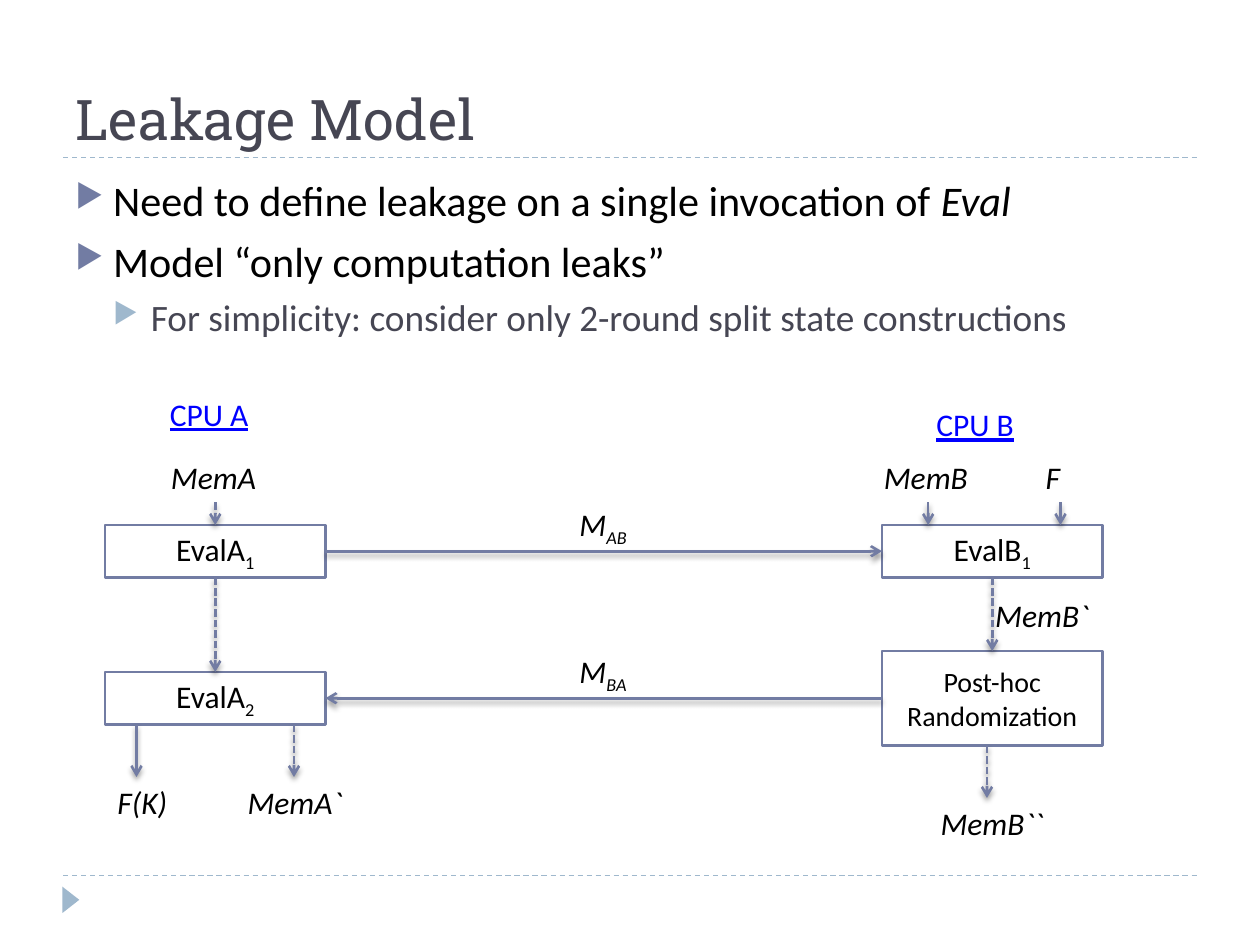
from lxml import etree
from pptx import Presentation
from pptx import util as u
from pptx.dml.color import RGBColor
from pptx.enum import dml, shapes, text
from pptx.oxml.ns import qn

COLS, ROWS = 120, 90
INK, SLATE, INDIGO, MIST, LINK = "000000", "464653", "727CA3", "9FB8CD", "0000FF"
BOX_W, BOX_H, LABEL_H = 21, 5, 4.85
TOP, LEFT, BOTTOM, RIGHT = range(4)

prs = Presentation()
prs.slide_width, prs.slide_height = u.Inches(10), u.Inches(7.5)
UNIT = prs.slide_width / COLS


def grid(*cells):
    return [u.Emu(round(cell * UNIT)) for cell in cells]


def color(hex_code):
    return RGBColor.from_string(hex_code)


def add_xml(parent, tag, **attributes):
    return etree.SubElement(parent, qn(tag), attributes)


def style(paragraph, size, ink, face="Calibri", italic=None, underline=None):
    font = paragraph.font
    font.name, font.size, font.color.rgb = face, u.Pt(size), color(ink)
    font.italic, font.underline = italic, underline


def write(paragraph, words, subscript=""):
    paragraph.add_run().text = words
    if subscript:
        lowered = paragraph.add_run()
        lowered.text = subscript
        lowered.font._element.set("baseline", "-25000")


def label(slide, col, row, width, words, subscript="", ink=INK, italic=True, underline=None):
    frame = slide.shapes.add_textbox(*grid(col, row, width, LABEL_H)).text_frame
    frame.word_wrap = False
    frame.auto_size = text.MSO_AUTO_SIZE.SHAPE_TO_FIT_TEXT
    write(frame.paragraphs[0], words, subscript)
    style(frame.paragraphs[0], 18, ink, italic=italic, underline=underline)


def step(slide, col, row, words, subscript="", height=BOX_H, size=18):
    box = slide.shapes.add_shape(shapes.MSO_SHAPE.RECTANGLE, *grid(col, row, BOX_W, height))
    box.shadow.inherit = False
    box.fill.solid()
    box.fill.fore_color.rgb = color("FFFFFF")
    box.line.color.rgb, box.line.width = color(INDIGO), u.Pt(1.5)
    frame = box.text_frame
    frame.word_wrap, frame.vertical_anchor = True, text.MSO_ANCHOR.MIDDLE
    paragraph = frame.paragraphs[0]
    paragraph.alignment = text.PP_ALIGN.CENTER
    write(paragraph, words, subscript)
    style(paragraph, size, INK)
    return box


def rule(slide, start, end, ink, width, dash=None):
    line = slide.shapes.add_connector(shapes.MSO_CONNECTOR.STRAIGHT, *grid(*start, *end))
    line.line.color.rgb, line.line.width = color(ink), u.Pt(width)
    if dash:
        line.line.dash_style = dash
    return line, add_xml(line._element.spPr, "a:effectLst")


def arrow(slide, start=(0, 0), end=(0, 0), dashed=False, source=None, target=None):
    dash = dml.MSO_LINE.SQUARE_DOT if dashed else None
    line, effects = rule(slide, start, end, INDIGO, 1.5, dash)
    add_xml(line._element.spPr.find(qn("a:ln")), "a:tailEnd", type="arrow")
    shadow = add_xml(effects, "a:outerShdw", blurRad=str(u.Pt(3)), dist=str(u.Pt(2)),
                     dir="5400000", rotWithShape="0")
    add_xml(add_xml(shadow, "a:srgbClr", val=INK), "a:alpha", val="40000")
    if source:
        line.begin_connect(*source)
    if target:
        line.end_connect(*target)


def heading(slide, left, top, width, height):
    frame = slide.shapes.add_textbox(*grid(left, top, width, height)).text_frame
    frame.word_wrap, frame.vertical_anchor = True, text.MSO_ANCHOR.BOTTOM
    write(frame.paragraphs[0], "Leakage Model")
    style(frame.paragraphs[0], 32, SLATE, "Roboto Slab")
    base = top + height
    rule(slide, (left, base), (left + width, base), MIST, 0.75, dml.MSO_LINE.DASH)


def points(slide, left, top, width, height):
    frame = slide.shapes.add_textbox(*grid(left, top, width, height)).text_frame
    frame.word_wrap = True
    levels = [(24.1, INK, INDIGO, 6), (21.3, SLATE, MIST, 5)]
    lines = [
        (0, "Need to define leakage on a single invocation of ", "Eval"),
        (0, "Model “only computation leaks”", ""),
        (1, "For simplicity: consider only 2-round split state constructions", ""),
    ]
    for index, (level, words, emphasis) in enumerate(lines):
        size, ink, marker, gap = levels[level]
        paragraph = frame.add_paragraph() if index else frame.paragraphs[0]
        paragraph.level, paragraph.space_before = level, u.Pt(gap)
        props = paragraph._p.get_or_add_pPr()
        props.set("marL", str(u.Inches(0.3 * (level + 1))))
        props.set("indent", str(u.Inches(-0.3)))
        add_xml(add_xml(props, "a:buClr"), "a:srgbClr", val=marker)
        add_xml(props, "a:buSzPct", val="76000")
        add_xml(props, "a:buChar", char="▶")
        write(paragraph, words)
        if emphasis:
            emphasized = paragraph.add_run()
            emphasized.text, emphasized.font.italic = emphasis, True
        style(paragraph, size, ink)


def cpu_a(slide, left, top):
    label(slide, left + 5, top, 11, "CPU A", ink=LINK, italic=None, underline=True)
    label(slide, left + 5.1, top + 6, 10.8, "MemA")
    first = step(slide, left, top + 13, "EvalA", "1")
    second = step(slide, left, top + 27, "EvalA", "2")
    middle = left + BOX_W / 2
    arrow(slide, (middle, top + 10.85), dashed=True, target=(first, TOP))
    arrow(slide, dashed=True, source=(first, BOTTOM), target=(second, TOP))
    for offset, dashed in ((3, False), (18, True)):
        arrow(slide, (left + offset, top + 32), (left + offset, top + 37), dashed)
    label(slide, left, top + 37, 8.3, "F(K)")
    label(slide, left + 12.4, top + 37, 11.5, "MemA`")
    return first, second


def cpu_b(slide, left, top):
    label(slide, left + 4, top + 1, 11, "CPU B", ink=LINK, italic=None, underline=True)
    label(slide, left - 1, top + 6, 10.8, "MemB")
    label(slide, left + 14.4, top + 6, 4.3, "F")
    first = step(slide, left, top + 13, "EvalB", "1")
    randomization = step(slide, left, top + 25, "Post-hoc Randomization", height=9, size=16)
    for offset in (4.4, 17):
        arrow(slide, (left + offset, top + 10.85), (left + offset, top + 13))
    arrow(slide, dashed=True, source=(first, BOTTOM), target=(randomization, TOP))
    arrow(slide, (left + 10, top + 34), (left + 10, top + 39), dashed=True)
    label(slide, left + 9.6, top + 19.2, 11.5, "MemB`")
    label(slide, left + 4.4, top + 39, 12.5, "MemB``")
    return first, randomization


def messages(slide, left, top, a_steps, b_steps):
    arrow(slide, source=(a_steps[0], RIGHT), target=(b_steps[0], LEFT))
    arrow(slide, source=(b_steps[1], LEFT), target=(a_steps[1], RIGHT))
    for index, direction in enumerate(("AB", "BA")):
        label(slide, left, top + 14 * index, 7.4, "M", direction)


def footer(slide, left, top, width):
    rule(slide, (left, top), (left + width, top), MIST, 0.75, dml.MSO_LINE.DASH)
    marker = slide.shapes.add_shape(shapes.MSO_SHAPE.ISOSCELES_TRIANGLE,
                                    *grid(left - 0.5, top + 1.5, 2.5, 1.6))
    marker.rotation = 90
    marker.shadow.inherit = False
    marker.fill.solid()
    marker.fill.fore_color.rgb = color(MIST)
    marker.line.fill.background()


def main():
    slide = prs.slides.add_slide(prs.slide_layouts[6])
    footer(slide, 6, 83.4, 108)
    heading(slide, 6, 2, 108, 13)
    points(slide, 6, 16, 108, 20)
    a_steps = cpu_a(slide, 10, 37)
    b_steps = cpu_b(slide, 84, 37)
    messages(slide, 54, 47.5, a_steps, b_steps)
    prs.save("out.pptx")


if __name__ == "__main__":
    main()
